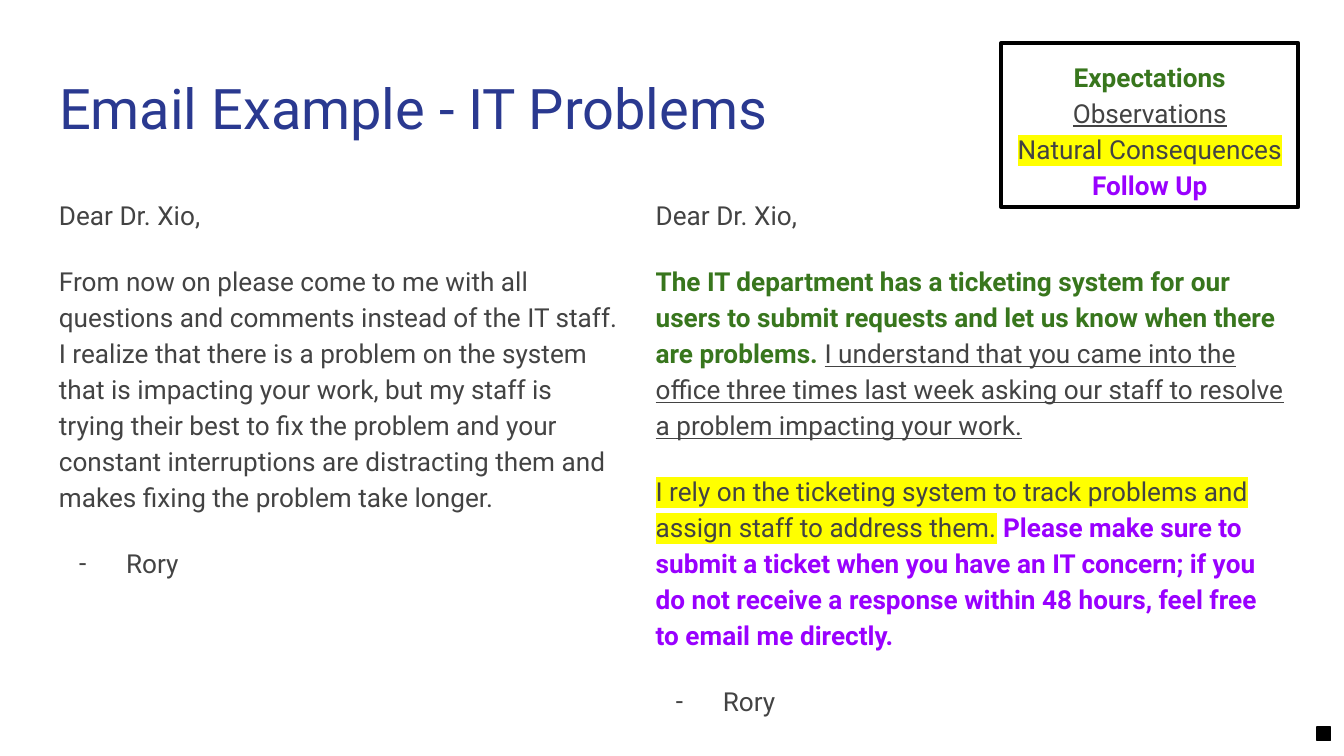
from dataclasses import dataclass
from lxml.etree import SubElement, Element
from pptx import Presentation
from pptx.dml.color import RGBColor
from pptx.enum.shapes import MSO_SHAPE
from pptx.enum.text import MSO_ANCHOR, MSO_AUTO_SIZE, PP_ALIGN
from pptx.oxml.ns import qn
from pptx.util import Pt


@dataclass
class Theme:
    font: str = "Roboto"
    head: str = "2A3990"
    ink: str = "434343"
    green: str = "38761D"
    mark: str = "FFFF00"
    violet: str = "9900FF"
    black: str = "000000"
    large: int = 30
    small: int = 14


theme = Theme()
PX = 4572
expect = dict(color=theme.green, bold=True)
observe = dict(under=True)
result = dict(mark=theme.mark)
follow = dict(color=theme.violet, bold=True)


def write(para, text, size=theme.small, color=theme.ink, bold=False, under=False, mark=None):
    run = para.add_run()
    run.text = text
    font = run.font
    font.name, font.size = theme.font, Pt(size)
    font.bold, font.underline = bold, under
    font.color.rgb = RGBColor.from_string(color)
    if mark:
        light = Element(qn("a:highlight"))
        SubElement(light, qn("a:srgbClr"), val=mark)
        run._r.rPr.find(qn("a:solidFill")).addnext(light)


def frame(shape):
    body = shape.text_frame
    body.word_wrap = True
    body.auto_size = MSO_AUTO_SIZE.NONE
    body.vertical_anchor = MSO_ANCHOR.TOP
    body.margin_left = body.margin_right = 20 * PX
    body.margin_top = body.margin_bottom = 20 * PX
    return body


deck = Presentation()
deck.slide_width, deck.slide_height = 2000 * PX, 1125 * PX
slide = deck.slides.add_slide(deck.slide_layouts[5])
shapes = slide.shapes

title = shapes.title
title.left, title.top, title.width, title.height = [n * PX for n in (68, 90, 1864, 132)]
para = frame(title).paragraphs[0]
para.alignment = PP_ALIGN.LEFT
write(para, "Email Example - IT Problems", size=theme.large, color=theme.head)

after = [
    [("Dear Dr. Xio,", {})],
    [
        ("The IT department has a ticketing system for our users to submit requests "
         "and let us know when there are problems. ", expect),
        ("I understand that you came into the office three times last week asking our "
         "staff to resolve a problem impacting your work.", observe),
    ],
    [
        ("I rely on the ticketing system to track problems and assign staff to "
         "address them.", result),
        (" ", {}),
        ("Please make sure to submit a ticket when you have an IT concern; if you do "
         "not receive a response within 48 hours, feel free to email me directly.", follow),
    ],
    [("Rory", {})],
]
before = [
    [("Dear Dr. Xio,", {})],
    [("From now on please come to me with all questions and comments instead of the IT "
      "staff. I realize that there is a problem on the system that is impacting your "
      "work, but my staff is trying their best to fix the problem and your constant "
      "interruptions are distracting them and makes fixing the problem take longer.", {})],
    [("Rory", {})],
]

for left, width, mail in ((956, 976, after), (68, 874, before)):
    body = frame(shapes.add_textbox(left * PX, 270 * PX, width * PX, 730 * PX))
    for i, parts in enumerate(mail):
        para = body.add_paragraph() if i else body.paragraphs[0]
        para.line_spacing = 1.15
        para.space_before = Pt(16 if i else 0)
        for text, form in parts:
            write(para, text, **form)
    props = para._p.get_or_add_pPr()
    props.set("marL", str(100 * PX))
    props.set("indent", str(-70 * PX))
    tint = SubElement(props, qn("a:buClr"))
    SubElement(tint, qn("a:srgbClr"), val=theme.ink)
    SubElement(props, qn("a:buFont"), typeface=theme.font)
    SubElement(props, qn("a:buChar"), char="-")

key = shapes.add_shape(MSO_SHAPE.RECTANGLE, 1490 * PX, 64 * PX, 442 * PX, 244 * PX)
key.shadow.inherit = False
key.fill.background()
key.line.color.rgb = RGBColor.from_string(theme.black)
key.line.width = Pt(2.25)
body = frame(key)
names = (("Expectations", expect), ("Observations", observe),
         ("Natural Consequences", result), ("Follow Up", follow))
for i, (text, form) in enumerate(names):
    para = body.add_paragraph() if i else body.paragraphs[0]
    para.alignment = PP_ALIGN.CENTER
    para.line_spacing = 1.15
    write(para, text, **form)

dot = shapes.add_shape(MSO_SHAPE.RECTANGLE, 1960 * PX, 1082 * PX, 20 * PX, 20 * PX)
dot.shadow.inherit = False
dot.fill.solid()
dot.fill.fore_color.rgb = RGBColor.from_string(theme.black)
dot.line.color.rgb = RGBColor.from_string(theme.black)
dot.line.width = Pt(0.75)

deck.save("out.pptx")
